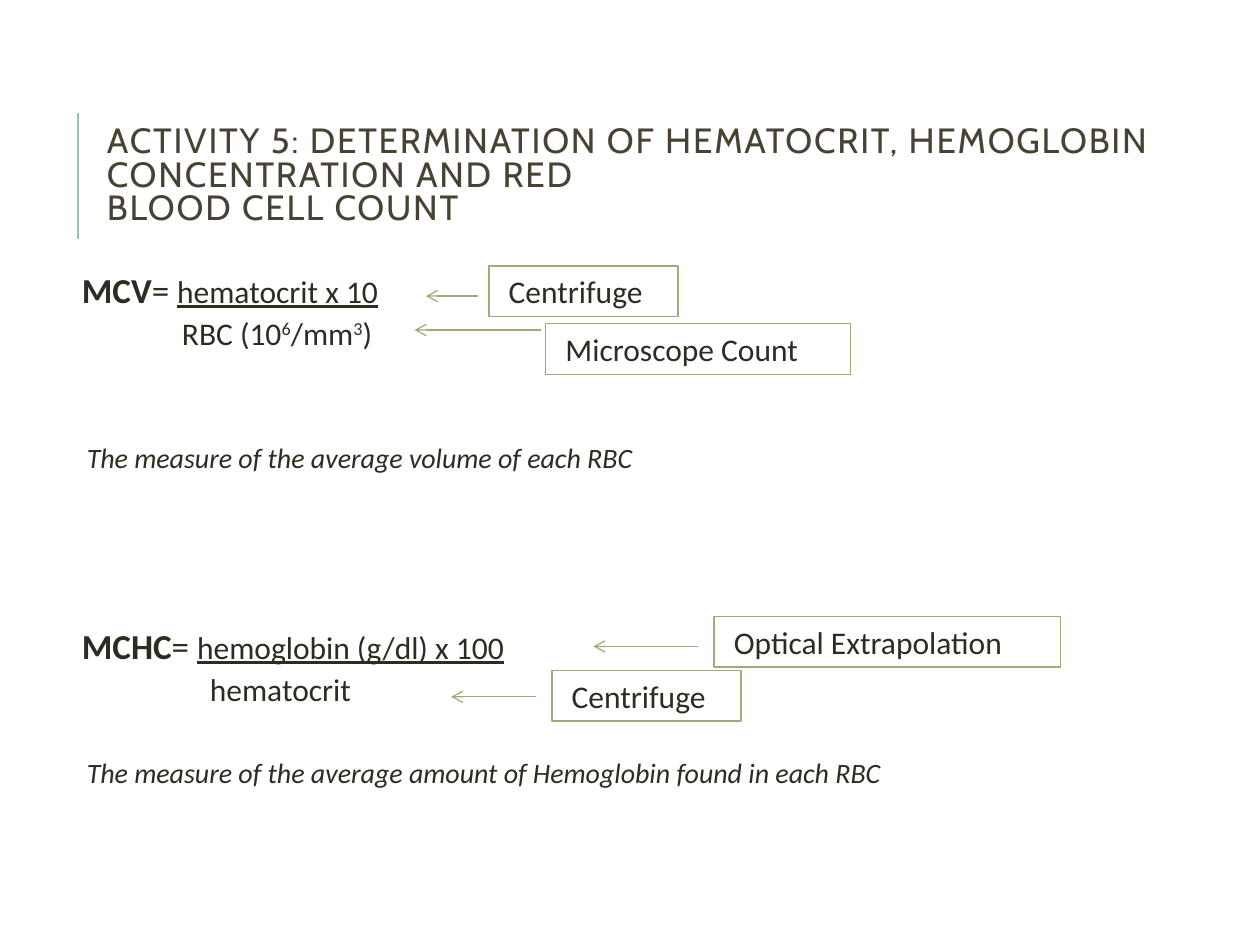
from pptx import Presentation
from pptx.dml.color import RGBColor
from pptx.enum.shapes import MSO_CONNECTOR, MSO_SHAPE
from pptx.enum.text import MSO_ANCHOR, PP_ALIGN
from pptx.oxml.ns import qn
from pptx.util import Pt
from lxml import etree

COLORS = {"title": "474233", "text": "2E2B21", "line": "A9A57C", "bar": "9CBEBD"}


class Deck:
    def __init__(self, width, height):
        self.show = Presentation()
        self.show.slide_width, self.show.slide_height = Pt(width), Pt(height)
        self.slide = self.show.slides.add_slide(self.show.slide_layouts[6])

    def style(self, run, size, font="Calibri", color="text"):
        run.font.size, run.font.name = Pt(size), font
        run.font.color.rgb = RGBColor.from_string(COLORS[color])

    def box(self, left, top, width, height, inset=None):
        shape = self.slide.shapes.add_textbox(Pt(left), Pt(top), Pt(width), Pt(height))
        frame = shape.text_frame
        frame.word_wrap = True
        if inset is not None:
            frame.margin_left = frame.margin_right = Pt(inset)
            frame.margin_top = frame.margin_bottom = Pt(inset)
        return frame

    def title(self, text, left, top, width, height):
        frame = self.box(left, top, width, height)
        frame.vertical_anchor = MSO_ANCHOR.MIDDLE
        frame.text = text
        para = frame.paragraphs[0]
        para.line_spacing = 0.8
        for run in para.runs:
            self.style(run, 20, "Cabin", "title")
            run.font._element.set("spc", "100")

    def body(self, rows, left, top, width, height):
        frame = self.box(left, top, width, height, 3.6)
        for i, (indent, before, after, parts) in enumerate(rows):
            para = frame.add_paragraph() if i else frame.paragraphs[0]
            para._p.get_or_add_pPr().set("marL", str(Pt(indent)))
            para.line_spacing = 0.9
            para.space_before, para.space_after = Pt(before), Pt(after)
            for text, size, look in parts:
                run = para.add_run()
                run.text = text
                self.style(run, size)
                run.font.bold = look == "bold"
                run.font.italic = look == "italic"
                run.font.underline = look == "under"
                if look == "super":
                    run.font._element.set("baseline", "30000")

    def label(self, text, left, top, width, height=29):
        shape = self.slide.shapes.add_shape(
            MSO_SHAPE.RECTANGLE, Pt(left), Pt(top), Pt(width), Pt(height))
        shape.shadow.inherit = False
        shape.fill.background()
        shape.line.color.rgb = RGBColor.from_string(COLORS["line"])
        shape.line.width = Pt(0.75)
        frame = shape.text_frame
        frame.margin_left = Pt(11.3)
        frame.vertical_anchor = MSO_ANCHOR.MIDDLE
        frame.text = text
        para = frame.paragraphs[0]
        para.alignment = PP_ALIGN.LEFT
        self.style(para.runs[0], 18)

    def line(self, x1, y1, x2, y2, color="line", width=0.75, arrow=True):
        link = self.slide.shapes.add_connector(
            MSO_CONNECTOR.STRAIGHT, Pt(x1), Pt(y1), Pt(x2), Pt(y2))
        link.line.color.rgb = RGBColor.from_string(COLORS[color])
        link.line.width = Pt(width)
        if arrow:
            etree.SubElement(link.line._get_or_add_ln(), qn("a:tailEnd"), type="arrow")
        etree.SubElement(link._element.spPr, qn("a:effectLst"))


def main():
    deck = Deck(720, 540)

    # Title with its side bar
    deck.line(44.6, 136.8, 44.6, 64.8, "bar", 1.5, arrow=False)
    deck.title("ACTIVITY 5: DETERMINATION OF HEMATOCRIT, HEMOGLOBIN "
               "CONCENTRATION AND RED \vBLOOD CELL COUNT", 54, 71.3, 666, 59.8)

    # Formulas and what they measure: indent, space before, space after, runs
    deck.body([
        (7.2, 12, 2, [("MCV", 20, "bold"), ("= ", 20, ""),
                      ("hematocrit x 10", 18, "under")]),
        (64.4, 2, 4, [("RBC (10", 18, ""), ("6", 18, "super"), ("/mm", 18, ""),
                      ("3", 18, "super"), (")", 18, "")]),
        (10, 49, 4, [("The measure of the average volume of each RBC", 16, "italic")]),
        (7.2, 84, 2, [("MCHC", 20, "bold"), ("= ", 20, ""),
                      ("hemoglobin (g/dl) x 100", 18, "under")]),
        (80.4, 2, 4, [("hematocrit", 18, "")]),
        (10, 25.6, 4, [("The measure of the average amount of Hemoglobin "
                        "found in each RBC", 16, "italic")]),
    ], 36, 152.6, 669.6, 348.5)

    # Instruments
    for text, left, top, width in [
        ("Centrifuge", 279.4, 152, 108),
        ("Microscope Count", 311.8, 185, 174.2),
        ("Optical Extrapolation", 408, 352.1, 198),
        ("Centrifuge", 315.4, 383, 108),
    ]:
        deck.label(text, left, top, width)

    # Arrows from instrument to formula term
    for start, end, y in [(272.9, 243.4, 169.2), (308.9, 236.9, 188.6),
                          (398.9, 339.1, 369.4), (306, 257.8, 398.2)]:
        deck.line(start, y, end, y)

    deck.show.save("out.pptx")


if __name__ == "__main__":
    main()
